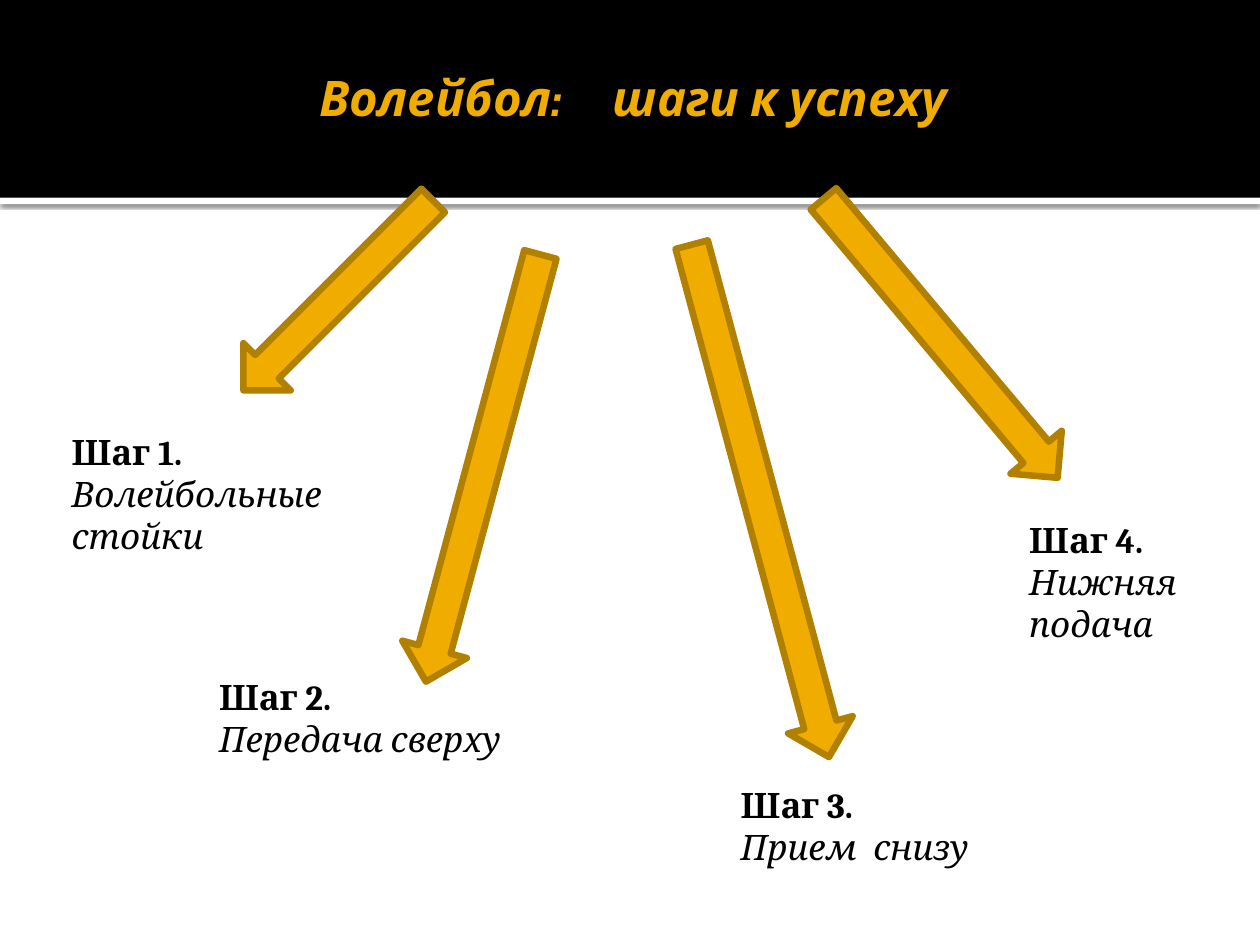
from dataclasses import dataclass

from lxml.etree import SubElement
from pptx import Presentation
from pptx.dml.color import RGBColor
from pptx.enum.shapes import MSO_SHAPE
from pptx.enum.text import MSO_ANCHOR, MSO_AUTO_SIZE, PP_ALIGN
from pptx.oxml.ns import qn
from pptx.slide import Slide
from pptx.util import Inches, Pt

BLACK = RGBColor(0, 0, 0)
WHITE = RGBColor(255, 255, 255)
AMBER = RGBColor(0xF0, 0xAD, 0)
DARK_AMBER = RGBColor(0xB2, 0x80, 0)


@dataclass
class StepsSlide:
    slide: Slide
    title_font: str = "Cabin"
    body_font: str = "Cambria"
    title_size: int = 28
    body_size: int = 20

    def band(self, top, height, color):
        band = self.slide.shapes.add_shape(
            MSO_SHAPE.RECTANGLE, 0, Inches(top), Inches(10), Inches(height))
        band.shadow.inherit = False
        band.fill.solid()
        band.fill.fore_color.rgb = color
        band.line.fill.background()
        return band

    def shadow(self, band):
        effects = band._element.spPr.find(qn("a:effectLst"))
        outer = SubElement(effects, qn("a:outerShdw"), blurRad=str(Pt(2.5)),
                           dist=str(Pt(0.8)), dir="5400000", algn="t", rotWithShape="0")
        shade = SubElement(outer, qn("a:srgbClr"), val=str(BLACK))
        SubElement(shade, qn("a:alpha"), val="60000")

    def run(self, paragraph, text, font, size, color, bold, italic, tracking=0):
        run = paragraph.add_run()
        run.text = text
        run.font.name = font
        run.font.size = Pt(size)
        run.font.color.rgb = color
        run.font.bold = bold
        run.font.italic = italic
        if tracking:
            run.font._element.set("spc", str(tracking))

    def phrase(self, paragraph, parts, gap, *style):
        for index, part in enumerate(parts):
            if index:
                self.run(paragraph, " ", *style, tracking=gap)
            self.run(paragraph, part, *style)

    def title(self, parts):
        title = self.slide.shapes.title
        title.left, title.top = Inches(0.25), Inches(0.31)
        title.width, title.height = Inches(9.5), Inches(0.92)
        self.slide.shapes._spTree.append(title._element)
        frame = title.text_frame
        frame.word_wrap = True
        frame.auto_size = MSO_AUTO_SIZE.NONE
        frame.vertical_anchor = MSO_ANCHOR.MIDDLE
        frame.margin_left = Inches(0.1)
        frame.margin_right = frame.margin_top = frame.margin_bottom = Inches(0.05)
        heading = frame.paragraphs[0]
        heading.alignment = PP_ALIGN.CENTER
        self.phrase(heading, parts, 2200, self.title_font, self.title_size,
                    AMBER, True, True)

    def arrow(self, left, top, height, rotation):
        arrow = self.slide.shapes.add_shape(
            MSO_SHAPE.DOWN_ARROW, Inches(left), Inches(top), Inches(0.53), Inches(height))
        arrow.rotation = rotation
        arrow.shadow.inherit = False
        arrow.fill.solid()
        arrow.fill.fore_color.rgb = AMBER
        arrow.line.color.rgb = DARK_AMBER
        arrow.line.width = Pt(3.78)
        SubElement(arrow.line._get_or_add_ln(), qn("a:round"))

    def step(self, number, parts, left, top, width, height):
        box = self.slide.shapes.add_textbox(
            Inches(left), Inches(top), Inches(width), Inches(height))
        frame = box.text_frame
        frame.word_wrap = True
        frame.auto_size = MSO_AUTO_SIZE.SHAPE_TO_FIT_TEXT
        frame.vertical_anchor = MSO_ANCHOR.MIDDLE
        style = self.body_font, self.body_size, BLACK
        self.run(frame.paragraphs[0], f"Шаг {number}.", *style, True, False)
        self.phrase(frame.add_paragraph(), parts, 500, *style, False, True)


ARROWS = [
    (7.2, 1.24, 2.89, 320),
    (5.77, 1.87, 4.21, 345),
    (3.57, 1.96, 3.51, 15),
    (2.42, 1.28, 2.13, 45),
]
STEPS = [
    (2, ["Передача сверху"], 1.64, 5.31, 2.81, 0.77),
    (3, ["Прием", "снизу"], 5.78, 6.17, 3.13, 0.77),
    (4, ["Нижняя подача"], 8.07, 4.06, 1.48, 1.11),
    (1, ["Волейбольные стойки"], 0.47, 3.36, 2.5, 1.11),
]


def main():
    deck = Presentation()
    deck.slide_width, deck.slide_height = Inches(10), Inches(7.5)
    page = StepsSlide(deck.slides.add_slide(deck.slide_layouts[5]))
    page.shadow(page.band(1.57, 0.05, WHITE))
    page.band(0, 1.57, BLACK)
    page.title(["Волейбол:", "шаги к успеху"])
    for arrow in ARROWS:
        page.arrow(*arrow)
    for step in STEPS:
        page.step(*step)
    deck.save("out.pptx")


if __name__ == "__main__":
    main()
